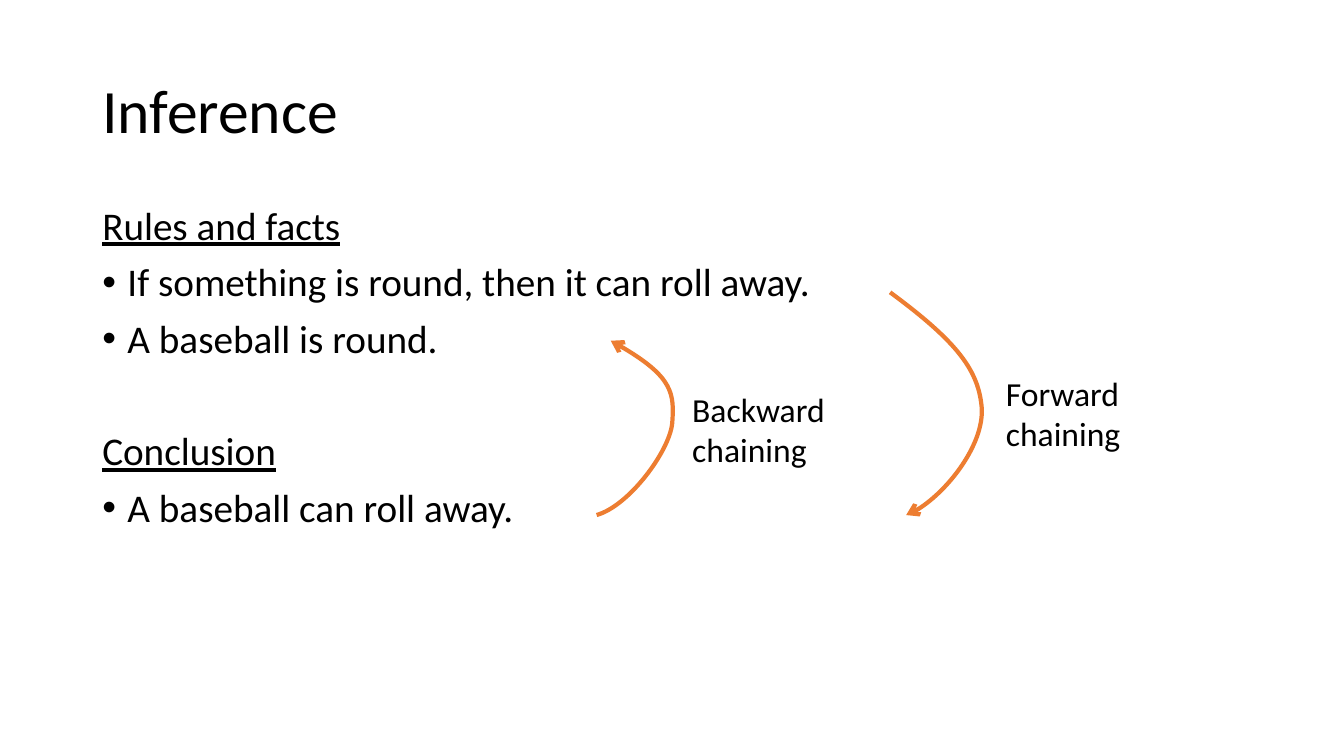
"""Build the Inference slide with its forward and backward chaining arrows."""
from lxml.etree import SubElement
from pptx import Presentation
from pptx.dml.color import RGBColor
from pptx.enum.text import MSO_ANCHOR as Anchor
from pptx.oxml.ns import qn
from pptx.util import Pt

FONT, BLACK, ORANGE = "Calibri", "000000", "ED7D31"
INDENT = 18
TITLE = "Inference"
SECTIONS = [
    ("Rules and facts", ["If something is round, then it can roll away.", "A baseball is round."]),
    ("Conclusion", ["A baseball can roll away."]),
]
PARAGRAPH_GAP, SECTION_GAP = 10, 50.2
CHAINS = [
    {
        "label": ["Forward", "chaining"],
        "box": (711.4, 262.8, 97.2, 65.5),
        "curve": [(635.8, 208.8), (684.7, 244.8), (699.1, 265), (701.3, 291.6),
                  (702.7, 317.5), (670.3, 360), (647.3, 367.9)],
        "arrow_end": "a:tailEnd",
    },
    {
        "label": ["Backward", "chaining"],
        "box": (487.4, 274.3, 110.2, 65.5),
        "curve": [(436.3, 243.4), (481, 267.8), (481.7, 281.5), (480.2, 302.4),
                  (478.1, 322.6), (449.3, 361.4), (426.2, 367.9)],
        "arrow_end": "a:headEnd",
    },
]


def color(hex_code):
    return RGBColor.from_string(hex_code)


def add_text(slide, box, lines, size, spacing=1.0, anchor=Anchor.TOP, wrap=True):
    """Add a text box; each line is (text, space before, kind)."""
    frame = slide.shapes.add_textbox(*map(Pt, box)).text_frame
    frame.word_wrap = wrap
    frame.vertical_anchor = anchor
    for index, (text, gap, kind) in enumerate(lines):
        paragraph = frame.add_paragraph() if index else frame.paragraphs[0]
        paragraph.line_spacing = spacing
        paragraph.space_before = Pt(gap if index else 0)
        if kind == "bullet":
            properties = paragraph._p.get_or_add_pPr()
            properties.set("marL", str(Pt(INDENT)))
            properties.set("indent", str(-Pt(INDENT)))
            SubElement(properties, qn("a:buFont"), typeface="Arial")
            SubElement(properties, qn("a:buChar"), char="•")
        run = paragraph.add_run()
        run.text = text
        run.font.name = FONT
        run.font.size = Pt(size)
        run.font.color.rgb = color(BLACK)
        if kind == "heading":
            run.font.underline = True


def add_curved_arrow(slide, points, arrow_end):
    """Draw a curve of cubic segments through a start and triples of points."""
    start, *rest = [(Pt(x), Pt(y)) for x, y in points]
    builder = slide.shapes.build_freeform(*start)
    builder.add_line_segments(rest, close=False)
    shape = builder.convert_to_shape()
    shape.shadow.inherit = False
    shape.fill.background()
    shape.line.color.rgb = color(ORANGE)
    shape.line.width = Pt(3)
    outline = next(shape._element.iter(qn("a:path")))
    segments = outline.findall(qn("a:lnTo"))
    for first in range(0, len(segments), 3):
        cubic = SubElement(outline, qn("a:cubicBezTo"))
        for segment in segments[first:first + 3]:
            cubic.append(segment[0])
            outline.remove(segment)
    SubElement(shape.line._get_or_add_ln(), qn(arrow_end), type="arrow")


def main():
    presentation = Presentation()
    presentation.slide_width, presentation.slide_height = Pt(960), Pt(540)
    slide = presentation.slides.add_slide(presentation.slide_layouts[6])
    add_text(slide, (66, 28.8, 828, 104.4), [(TITLE, 0, "plain")], 44, 0.9, Anchor.MIDDLE)
    body = []
    for heading, bullets in SECTIONS:
        body.append((heading, SECTION_GAP, "heading"))
        body += [(bullet, PARAGRAPH_GAP, "bullet") for bullet in bullets]
    add_text(slide, (66, 144, 828, 342.7), body, 28, 0.9)
    for chain in CHAINS:
        add_curved_arrow(slide, chain["curve"], chain["arrow_end"])
        label = [(text, 0, "plain") for text in chain["label"]]
        add_text(slide, chain["box"], label, 24, wrap=False)
    presentation.save("out.pptx")


if __name__ == "__main__":
    main()
